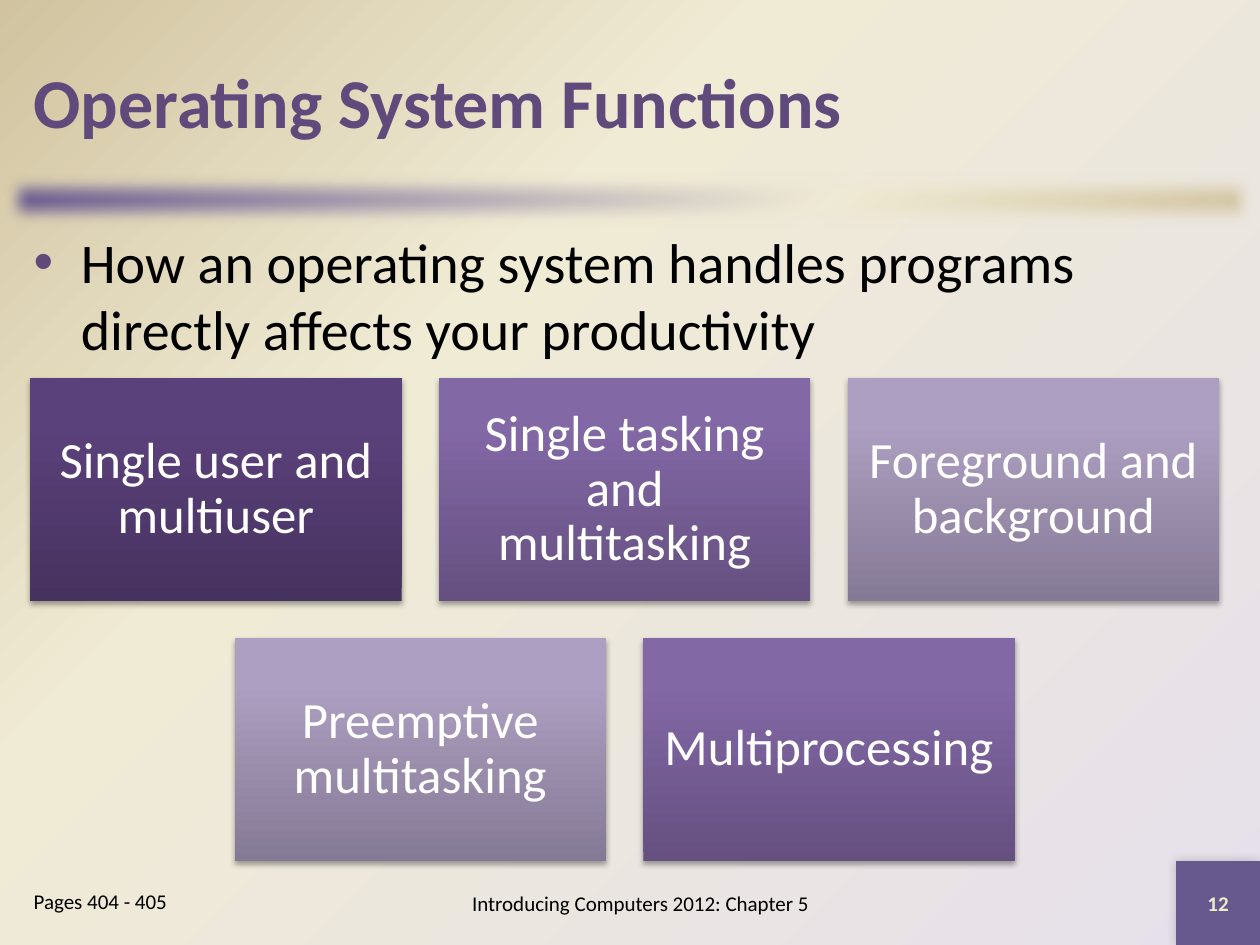
"""Build the Operating System Functions slide."""
import pptx
import pptx.dml.color
import pptx.enum.shapes
import pptx.enum.text
import pptx.oxml
import pptx.oxml.ns
import pptx.util

Cm = pptx.util.Cm
Pt = pptx.util.Pt
ALIGN = pptx.enum.text.PP_ALIGN
ANCHOR = pptx.enum.text.MSO_ANCHOR
RECTANGLE = pptx.enum.shapes.MSO_SHAPE.RECTANGLE
NAMESPACE = pptx.oxml.ns.nsdecls("a")
qn = pptx.oxml.ns.qn

THEME = {
    "title": {"size": Pt(40), "bold": True, "color": "604A7B"},
    "body": {"size": Pt(32), "bold": False, "color": "000000"},
    "card": {"size": Pt(29), "bold": False, "color": "FFFFFF"},
    "footer": {"size": Pt(12), "bold": False, "color": "000000"},
    "number": {"size": Pt(12), "bold": True, "color": "EEEBCA"},
    "font": "Calibri",
    "bullet": "604A7B",
    "corner": "67588E",
    "background": [(0, "E6E0EC"), (65, "F0EBD5"), (100, "D1C39F")],
    "bar": [(0, "67588E"), (65, "F0EBD5"), (100, "D1C39F")],
    "dark": [(0, "46325F"), (80, "5B417B"), (100, "5B407C")],
    "medium": [(0, "655080"), (80, "8368A6"), (100, "8368A8")],
    "light": [(0, "857A95"), (80, "AD9FC1"), (100, "AE9FC3")],
}
RADIAL = '<a:path path="circle"><a:fillToRect l="100000" t="100000"/></a:path>'
LINEAR = '<a:lin ang="{}" scaled="0"/>'
SHADOW = (
    '<a:outerShdw {} blurRad="{}" dist="{}" dir="{}" algn="ctr" rotWithShape="0">'
    '<a:srgbClr val="000000"><a:alpha val="{}"/></a:srgbClr></a:outerShdw>'
)


def write(shape, text, style, align, anchor, inset=0.25):
    """Fill a shape with one formatted paragraph and return it."""
    frame = shape.text_frame
    margins = {f"margin_{side}": Cm(inset) for side in ("left", "right")}
    margins |= {f"margin_{side}": Cm(inset if inset > 0.25 else 0.13) for side in ("top", "bottom")}
    for name, value in {"word_wrap": True, "vertical_anchor": anchor, **margins}.items():
        setattr(frame, name, value)
    para = frame.paragraphs[0]
    para.alignment = align
    span = para.add_run()
    span.text = text
    span.font.name = THEME["font"]
    for name in ("size", "bold"):
        setattr(span.font, name, THEME[style][name])
    span.font.color.rgb = pptx.dml.color.RGBColor.from_string(THEME[style]["color"])
    return para


def blend(fill, element, stops, direction):
    """Give an element a gradient with the listed stops."""
    fill.gradient()
    old = element.find(f".//{qn('a:gradFill')}")
    marks = "".join(
        f'<a:gs pos="{place * 1000}"><a:srgbClr val="{color}"/></a:gs>' for place, color in stops
    )
    new = pptx.oxml.parse_xml(
        f'<a:gradFill {NAMESPACE} rotWithShape="1"><a:gsLst>{marks}</a:gsLst>{direction}</a:gradFill>'
    )
    old.getparent().replace(old, new)


deck = pptx.Presentation()
deck.slide_width, deck.slide_height = Cm(25.4), Cm(19.05)
page = deck.slides.add_slide(deck.slide_layouts[5])
background = page.background
blend(background.fill, page.element, THEME["background"], RADIAL)

bar = page.shapes.add_shape(RECTANGLE, 0, Cm(3.39), Cm(25.4), Cm(1.27))
bar.shadow.inherit = False
bar.line.fill.background()
blend(bar.fill, bar.element, THEME["bar"], LINEAR.format(2700000))
bar.element.spPr.find(qn("a:effectLst")).append(
    pptx.oxml.parse_xml(f'<a:softEdge {NAMESPACE} rad="127000"/>')
)

corner = page.shapes.add_shape(RECTANGLE, Cm(23.71), Cm(17.36), Cm(1.69), Cm(1.69))
corner.shadow.inherit = False
corner.line.fill.background()
corner.fill.solid()
corner.fill.fore_color.rgb = pptx.dml.color.RGBColor.from_string(THEME["corner"])
corner.element.spPr.find(qn("a:effectLst")).append(
    pptx.oxml.parse_xml(SHADOW.format(NAMESPACE, Pt(6), 0, 13500000, 20000))
)
write(corner, "12", "number", ALIGN.CENTER, ANCHOR.MIDDLE)

title = page.shapes.title
for name, value in {"left": 0.43, "top": 0.43, "width": 24.55, "height": 3.18}.items():
    setattr(title, name, Cm(value))
write(title, "Operating System Functions", "title", ALIGN.LEFT, ANCHOR.MIDDLE)

body = page.shapes.add_textbox(Cm(0.43), Cm(4.45), Cm(24.55), Cm(12.9))
para = write(
    body,
    "How an operating system handles programs directly affects your productivity",
    "body", ALIGN.LEFT, ANCHOR.TOP,
)
properties = para._p.get_or_add_pPr()
properties.set("marL", str(Cm(0.95)))
properties.set("indent", str(-Cm(0.95)))
for markup in (
    f'<a:buClr {NAMESPACE}><a:srgbClr val="{THEME["bullet"]}"/></a:buClr>',
    f'<a:buFont {NAMESPACE} typeface="Arial"/>',
    f'<a:buChar {NAMESPACE} char="•"/>',
):
    properties.append(pptx.oxml.parse_xml(markup))

footers = [
    ("Introducing Computers 2012: Chapter 5", 7.62, 17.57, 10.59, ALIGN.CENTER, ANCHOR.MIDDLE),
    ("Pages 404 - 405", 0.43, 17.78, 4.65, ALIGN.LEFT, ANCHOR.TOP),
]
for text, left, top, width, align, anchor in footers:
    box = page.shapes.add_textbox(Cm(left), Cm(top), Cm(width), Cm(1.27))
    write(box, text, "footer", align, anchor)

card_rows = [
    [("Single user and multiuser", "dark"),
     ("Single tasking and multitasking", "medium"),
     ("Foreground and background", "light")],
    [("Preemptive multitasking", "light"), ("Multiprocessing", "medium")],
]
column_step, row_step = 8.24, 5.24
for row, cards in enumerate(card_rows):
    for column, (text, shade) in enumerate(cards):
        left = 0.61 + column_step * (column + row / 2)
        card = page.shapes.add_shape(
            RECTANGLE, Cm(left), Cm(7.62 + row_step * row), Cm(7.49), Cm(4.5)
        )
        card.shadow.inherit = False
        card.line.fill.background()
        blend(card.fill, card.element, THEME[shade], LINEAR.format(16200000))
        card.element.spPr.find(qn("a:effectLst")).append(
            pptx.oxml.parse_xml(SHADOW.format(NAMESPACE, Pt(3.1), Pt(1.8), 5400000, 35000))
        )
        para = write(card, text, "card", ALIGN.CENTER, ANCHOR.MIDDLE, 0.3)
        para.line_spacing = 0.9

deck.save("out.pptx")
